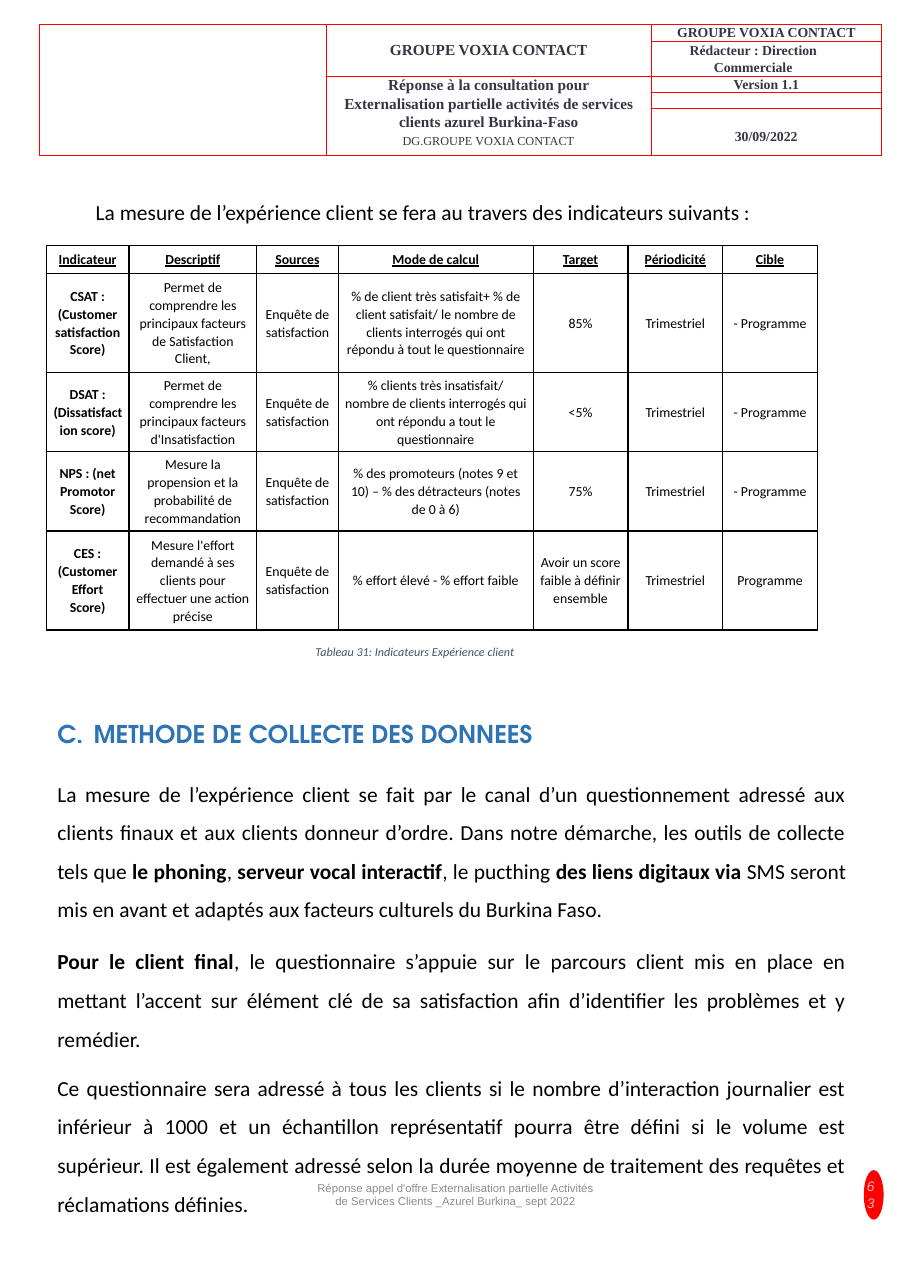
from dataclasses import dataclass, replace

from lxml.etree import SubElement
from pptx import Presentation
from pptx.dml.color import RGBColor
from pptx.enum.shapes import MSO_SHAPE as Shape
from pptx.enum.text import MSO_ANCHOR as Anchor, MSO_AUTO_SIZE as AutoSize, PP_ALIGN as Align
from pptx.oxml.ns import qn
from pptx.util import Inches, Pt


@dataclass(frozen=True)
class Style:
    font: str
    size: float
    color: str
    bold: bool = False
    italic: bool = False
    underline: bool = False
    align: Align = Align.CENTER
    line: float | Pt = 1.0
    before: float = 0
    after: float = 0


@dataclass(frozen=True)
class Para:
    style: Style
    phrases: tuple[str, ...]  # every second phrase is bold
    hanging: tuple[float, float] | None = None
    number_from: int = 0


@dataclass(frozen=True)
class HeaderCell:
    row: int
    column: int
    last_row: int
    paras: tuple[Para, ...]
    anchor: Anchor = Anchor.TOP
    margins: tuple[float, float, float, float] = (0, 0, 0, 0)


HEADER = Style("Times New Roman", 9, "373545", bold=True)
HEADER_TITLE = replace(HEADER, size=10)
CELL = Style("Calibri", 9, "000000", line=1.07)
INTRO = Style("Calibri", 14, "000000", align=Align.JUSTIFY, line=1.07)
BODY = replace(INTRO, line=1.5, after=7)
CAPTION = Style("Calibri", 7.9, "44546A", italic=True)
HEADING = Style("TeX Gyre Adventor", 16, "2E74B5", bold=True, align=Align.LEFT, line=1.07)
FOOTER = Style("Arial", 7.4, "8C8C8C")
PAGE_NUMBER = Style("Arial", 9, "FFFFFF", italic=True, align=Align.RIGHT)

COMPANY = "GROUPE VOXIA CONTACT"
HEADER_COLUMNS = (2.6, 2.95, 2.09)
HEADER_ROWS = (0.15, 0.32, 0.15, 0.14, 0.43)
HEADER_CELLS = (
    HeaderCell(0, 0, 4, (Para(HEADER, ()),)),
    HeaderCell(0, 1, 1, (Para(HEADER_TITLE, (COMPANY,)),), Anchor.MIDDLE),
    HeaderCell(2, 1, 4, (
        Para(replace(HEADER_TITLE, line=Pt(11.9)), ("Réponse à la consultation pour",)),
        Para(replace(HEADER_TITLE, line=Pt(11.9)),
             ("Externalisation partielle activités de services clients azurel Burkina-Faso",)),
        Para(replace(HEADER, size=8, bold=False, before=2.6), (f"DG.{COMPANY}",)),
    )),
    HeaderCell(0, 2, 0, (Para(replace(HEADER, line=Pt(10.7)), (COMPANY,)),)),
    HeaderCell(1, 2, 1, (
        Para(replace(HEADER, align=Align.LEFT, line=Pt(11.3)),
             ("Rédacteur : Direction Commerciale",), hanging=(0.57, -0.22)),
    ), margins=(0, 0, 0.2, 0)),
    HeaderCell(2, 2, 2, (Para(replace(HEADER, line=Pt(10.8)), ("Version 1.1",)),)),
    HeaderCell(3, 2, 3, (Para(replace(HEADER, size=8), ()),)),
    HeaderCell(4, 2, 4, (Para(HEADER, ("30/09/2022",)),), Anchor.BOTTOM, (0, 0, 0, 0.1)),
)

SURVEY, QUARTERLY, PROGRAM = "Enquête de satisfaction", "Trimestriel", "- Programme"
INDICATOR_COLUMNS = (0.75, 1.16, 0.74, 1.77, 0.86, 0.86, 0.86)
INDICATOR_ROWS = (0.25, 0.9, 0.72, 0.72, 0.9)
INDICATORS = (
    ("Indicateur", "Descriptif", "Sources", "Mode de calcul", "Target", "Périodicité", "Cible"),
    ("CSAT : (Customer satisfaction Score)",
     "Permet de comprendre les principaux facteurs de Satisfaction Client,", SURVEY,
     "% de client très satisfait+ % de client satisfait/ le nombre de clients interrogés "
     "qui ont répondu à tout le questionnaire", "85%", QUARTERLY, PROGRAM),
    ("DSAT : (Dissatisfaction score)",
     "Permet de comprendre les principaux facteurs d'Insatisfaction", SURVEY,
     "% clients très insatisfait/ nombre de clients interrogés qui ont répondu a tout "
     "le questionnaire", "<5%", QUARTERLY, PROGRAM),
    ("NPS : (net Promotor Score)",
     "Mesure la propension et la probabilité de recommandation", SURVEY,
     "% des promoteurs (notes 9 et 10) – % des détracteurs (notes de 0 à 6)",
     "75%", QUARTERLY, PROGRAM),
    ("CES : (Customer Effort Score)",
     "Mesure l'effort demandé à ses clients pour effectuer une action précise", SURVEY,
     "% effort élevé - % effort faible", "Avoir un score faible à définir ensemble",
     QUARTERLY, "Programme"),
)

METHOD = (
    Para(replace(BODY, after=8.8), (
        "La mesure de l’expérience client se fait par le canal d’un questionnement adressé aux "
        "clients finaux et aux clients donneur d’ordre. Dans notre démarche, les outils de "
        "collecte tels que ", "le phoning", ", ", "serveur vocal interactif", ", le pucthing ",
        "des liens digitaux via ",
        "SMS seront mis en avant et adaptés aux facteurs culturels du Burkina Faso.")),
    Para(BODY, (
        "", "Pour le client final",
        ", le questionnaire s’appuie sur le parcours client mis en place en mettant l’accent sur "
        "élément clé de sa satisfaction afin d’identifier les problèmes et y remédier.")),
    Para(BODY, (
        "Ce questionnaire sera adressé à tous les clients si le nombre d’interaction journalier "
        "est inférieur à 1000 et un échantillon représentatif pourra être défini si le volume "
        "est supérieur. Il est également adressé selon la durée moyenne de traitement des "
        "requêtes et réclamations définies.",)),
)


def rgb(color: str) -> RGBColor:
    return RGBColor.from_string(color)


def write(frame, paras: tuple[Para, ...]) -> None:
    for index, para in enumerate(paras):
        paragraph = frame.paragraphs[0] if index == 0 else frame.add_paragraph()
        style = para.style
        properties = paragraph._p.get_or_add_pPr()
        left, first = para.hanging or (0, 0)
        properties.set("marL", str(Inches(left)))
        properties.set("indent", str(Inches(first)))
        if para.number_from:
            SubElement(properties, qn("a:buAutoNum"), type="alphaUcPeriod",
                       startAt=str(para.number_from))
        else:
            SubElement(properties, qn("a:buNone"))
        paragraph.alignment, paragraph.line_spacing = style.align, style.line
        paragraph.space_before, paragraph.space_after = Pt(style.before), Pt(style.after)
        font = paragraph.font
        font.name, font.size, font.bold = style.font, Pt(style.size), style.bold
        font.italic, font.underline = style.italic, style.underline
        font.color.rgb = rgb(style.color)
        for position, phrase in enumerate(para.phrases):
            if phrase:
                run = paragraph.add_run()
                run.text = phrase
                if position % 2:
                    run.font.bold = True


def fill_box(box, at: tuple[float, float, float, float], paras: tuple[Para, ...],
             anchor: Anchor = Anchor.TOP) -> None:
    box.left, box.top, box.width, box.height = map(Inches, at)
    frame = box.text_frame
    frame.word_wrap, frame.auto_size, frame.vertical_anchor = True, AutoSize.NONE, anchor
    write(frame, paras)


def add_text(slide, at: tuple[float, float, float, float], para: Para,
             anchor: Anchor = Anchor.TOP):
    box = slide.shapes.add_textbox(*map(Inches, at))
    fill_box(box, at, (para,), anchor)
    return box


def add_grid(slide, left: float, top: float, columns: tuple[float, ...],
             rows: tuple[float, ...], color: str, width: float):
    grid = slide.shapes.add_table(len(rows), len(columns), Inches(left), Inches(top),
                                  Inches(sum(columns)), Inches(sum(rows))).table
    grid.first_row = grid.horz_banding = False
    for column, size in zip(grid.columns, columns):
        column.width = Inches(size)
    for row, size in zip(grid.rows, rows):
        row.height = Inches(size)
    for cell in grid.iter_cells():
        properties = cell._tc.get_or_add_tcPr()
        for side in ("lnL", "lnR", "lnT", "lnB"):
            border = SubElement(properties, qn(f"a:{side}"), w=str(Pt(width)))
            solid = SubElement(border, qn("a:solidFill"))
            SubElement(solid, qn("a:srgbClr"), val=color)
        cell.fill.background()
    return grid


def fill_cell(cell, paras: tuple[Para, ...], anchor: Anchor,
              margins: tuple[float, float, float, float]) -> None:
    cell.margin_left, cell.margin_top, cell.margin_right, cell.margin_bottom = map(Inches, margins)
    cell.vertical_anchor = anchor
    write(cell.text_frame, paras)


def main() -> None:
    deck = Presentation()
    deck.slide_width, deck.slide_height = Inches(8.26), Inches(11.69)
    slide = deck.slides.add_slide(deck.slide_layouts[1])

    # Page header
    header = add_grid(slide, 0.36, 0.22, HEADER_COLUMNS, HEADER_ROWS, "FF0000", 0.25)
    for item in HEADER_CELLS:
        cell = header.cell(item.row, item.column)
        if item.last_row > item.row:
            cell.merge(header.cell(item.last_row, item.column))
        fill_cell(cell, item.paras, item.anchor, item.margins)

    # Indicators
    add_text(slide, (0.77, 1.74, 6.28, 0.35), Para(INTRO, (
        "La mesure de l’expérience client se fera au travers des indicateurs suivants :",)))
    indicators = add_grid(slide, 0.42, 2.23, INDICATOR_COLUMNS, INDICATOR_ROWS, "000000", 1)
    for row, texts in enumerate(INDICATORS):
        for column, text in enumerate(texts):
            style = replace(CELL, bold=row == 0 or column == 0, underline=row == 0)
            fill_cell(indicators.cell(row, column), (Para(style, (text,)),),
                      Anchor.MIDDLE, (0.06, 0, 0.06, 0))
    add_text(slide, (2.11, 5.8, 3.31, 0.23),
             Para(CAPTION, ("Tableau 31: Indicateurs Expérience client",)))

    # Collection method
    heading = Para(HEADING, ("METHODE DE COLLECTE DES DONNEES",), (0.33, -0.33), number_from=3)
    fill_box(slide.shapes.title, (0.42, 6.46, 4.85, 0.38), (heading,))
    fill_box(slide.placeholders[1], (0.42, 6.92, 7.36, 3.82), METHOD)

    # Footer and page number
    add_text(slide, (2.74, 10.53, 2.79, 0.62), Para(FOOTER, (
        "Réponse appel d'offre Externalisation partielle Activités de Services Clients "
        "_Azurel Burkina_ sept 2022",)), Anchor.MIDDLE)
    badge = slide.shapes.add_shape(Shape.OVAL, *map(Inches, (7.84, 10.62, 0.18, 0.45)))
    badge.shadow.inherit = False
    badge.fill.solid()
    badge.fill.fore_color.rgb = rgb("FF0000")
    badge.line.fill.background()
    number = add_text(slide, (7.77, 10.53, 0.24, 0.62), Para(PAGE_NUMBER, ("63",)), Anchor.MIDDLE)
    for tint in number._element.iter(qn("a:srgbClr")):
        SubElement(tint, qn("a:alpha"), val="70000")

    deck.save("out.pptx")


if __name__ == "__main__":
    main()
